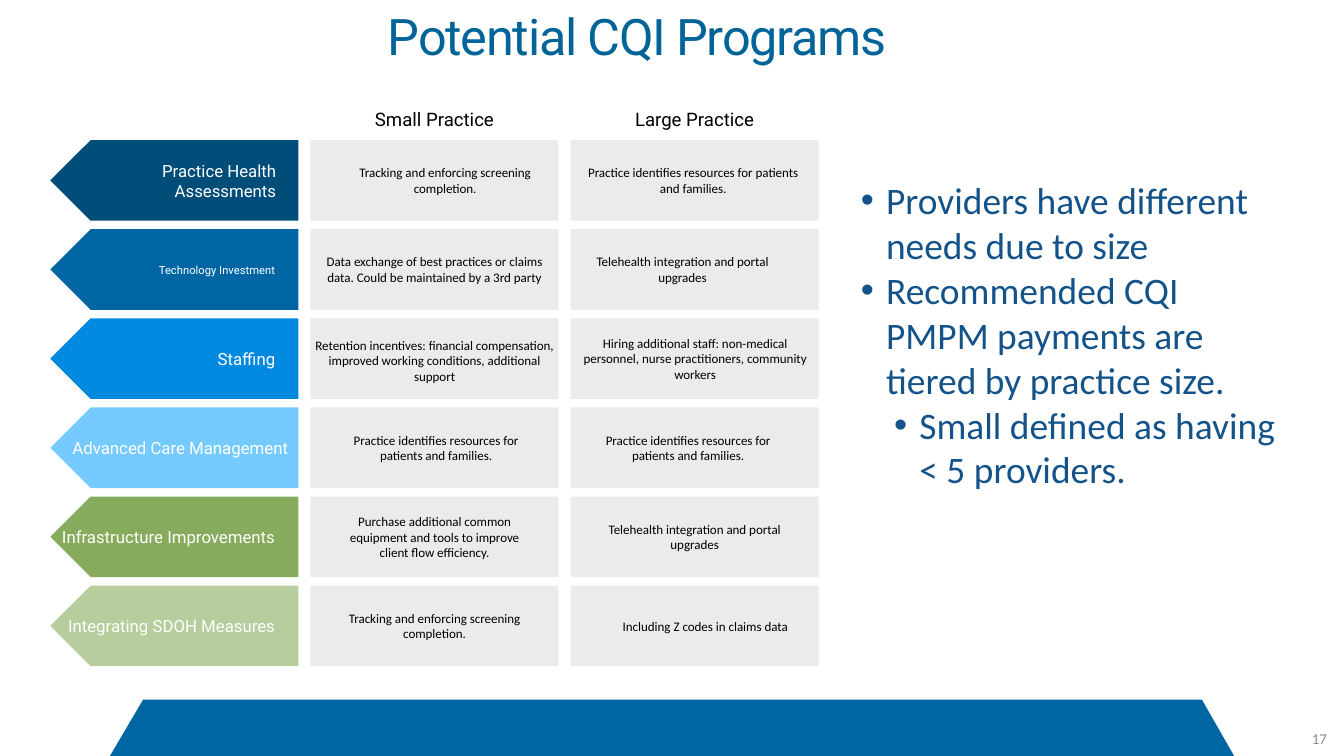
from typing import NamedTuple

from lxml import etree
from pptx import Presentation
from pptx import util as u
from pptx.dml.color import RGBColor
from pptx.enum import shapes, text
from pptx.oxml import ns

WHITE = RGBColor(0xFF, 0xFF, 0xFF)
BLACK = RGBColor(0, 0, 0)
TITLE_BLUE = RGBColor(0x00, 0x64, 0x98)
BODY_BLUE = RGBColor(0x13, 0x53, 0x8A)
NUMBER_GRAY = RGBColor(0x8C, 0x8C, 0x8C)
CELL_GRAY = RGBColor(0xEB, 0xEB, 0xEB)
NAVY = RGBColor(0x00, 0x4D, 0x7A)
BLUE = RGBColor(0x00, 0x66, 0xA3)
BRIGHT_BLUE = RGBColor(0x00, 0x89, 0xDE)
SKY = RGBColor(0x75, 0xCA, 0xFF)
GREEN = RGBColor(0x86, 0xAB, 0x5D)
PALE_GREEN = RGBColor(0xB6, 0xCD, 0x9E)

LEFT, CENTER, RIGHT = text.PP_ALIGN.LEFT, text.PP_ALIGN.CENTER, text.PP_ALIGN.RIGHT
MIDDLE, TOP = text.MSO_ANCHOR.MIDDLE, text.MSO_ANCHOR.TOP

ARROW_LEFT, SMALL_LEFT, LARGE_LEFT = 0.5, 3.08, 5.66
BLOCK_WIDTH, BLOCK_HEIGHT = 2.46, 0.8
FIRST_ROW_TOP, ROW_PITCH = 1.39, 0.884
HEADING_TOP, LABEL_HEIGHT, CELL_TEXT_HEIGHT = 0.98, 0.41, 0.6


class Style(NamedTuple):
    font: str
    size: float
    color: RGBColor
    align: text.PP_ALIGN
    anchor: text.MSO_ANCHOR = MIDDLE
    inset: float = 0.07


class Caption(NamedTuple):
    words: str
    left: float
    width: float
    shift: float = 0


class Program(NamedTuple):
    color: RGBColor
    label: Caption
    small: Caption
    large: Caption
    label_size: float = 12


class Bullet(NamedTuple):
    words: str
    level: int
    indent: float


TITLE = Style("Roboto", 36, TITLE_BLUE, CENTER, TOP, 0)
HEADING = Style("Roboto", 13.3, BLACK, CENTER)
LABEL = Style("Roboto", 12, WHITE, RIGHT)
CELL = Style("Calibri", 9.3, BLACK, CENTER)
BODY = Style("Calibri", 26.7, BODY_BLUE, LEFT, TOP, 0.1)
NUMBER = Style("Calibri", 10.7, NUMBER_GRAY, RIGHT, MIDDLE, 0.1)

RESOURCES = "Practice identifies resources for patients and families."
SCREENING = "Tracking and enforcing screening completion."
TELEHEALTH = "Telehealth integration and portal upgrades"

PROGRAMS = [
    Program(NAVY, Caption("Practice Health Assessments", 0.62, 2.19),
            Caption(SCREENING, 3.29, 2.25), Caption(RESOURCES, 5.75, 2.25)),
    Program(BLUE, Caption("Technology Investment", 0.77, 2.03),
            Caption("Data exchange of best practices or claims data. "
                    "Could be maintained by a 3rd party", 3.08, 2.46),
            Caption(TELEHEALTH, 5.75, 2.04), label_size=8),
    Program(BRIGHT_BLUE, Caption("Staffing", 1.52, 1.28),
            Caption("Retention incentives: financial compensation, improved "
                    "working conditions, additional support", 3.02, 2.58, 0.02),
            Caption("Hiring additional staff: non-medical personnel, nurse "
                    "practitioners, community workers", 5.66, 2.47)),
    Program(SKY, Caption("Advanced Care Management", 0.62, 2.31),
            Caption(RESOURCES, 3.25, 2.15), Caption(RESOURCES, 5.75, 2.15)),
    Program(GREEN, Caption("Infrastructure Improvements", 0.5, 2.3),
            Caption("Purchase additional common equipment and tools to improve "
                    "client flow efficiency.", 3.3, 2.02),
            Caption(TELEHEALTH, 5.77, 2.24)),
    Program(PALE_GREEN, Caption("Integrating SDOH Measures", 0.5, 2.3),
            Caption(SCREENING, 3.3, 2.02),
            Caption("Including Z codes in claims data", 5.98, 2.03)),
]

BULLETS = [
    Bullet("Providers have different needs due to size", 0, 0.25),
    Bullet("Recommended CQI PMPM payments are tiered by practice size.", 0, 0.25),
    Bullet("Small defined as having < 5 providers.", 1, 0.58),
]


def paint(shape, color: RGBColor) -> None:
    shape.fill.solid()
    shape.fill.fore_color.rgb = color
    shape.line.fill.background()
    shape.shadow.inherit = False


def add_text(page, words: str, left: float, top: float, width: float,
             height: float, style: Style):
    """Add a wrapped text box; each line of words becomes a paragraph."""
    box = page.shapes.add_textbox(*map(u.Inches, (left, top, width, height)))
    frame = box.text_frame
    frame.word_wrap = True
    frame.vertical_anchor = style.anchor
    frame.margin_left = frame.margin_right = u.Inches(style.inset)
    frame.margin_top = frame.margin_bottom = u.Inches(min(style.inset, 0.07))
    frame.text = words
    for para in frame.paragraphs:
        para.alignment = style.align
        for span in para.runs:
            span.font.name = style.font
            span.font.size = u.Pt(style.size)
            span.font.color.rgb = style.color
    return box


def add_block(page, kind: shapes.MSO_SHAPE, left: float, top: float, color: RGBColor):
    block = page.shapes.add_shape(
        kind, *map(u.Inches, (left, top, BLOCK_WIDTH, BLOCK_HEIGHT)))
    paint(block, color)
    return block


def add_caption(page, caption: Caption, row_top: float, height: float,
                style: Style) -> None:
    """Centre a caption vertically on its row."""
    top = row_top + (BLOCK_HEIGHT - height) / 2 + caption.shift
    add_text(page, caption.words, caption.left, top, caption.width, height, style)


def add_program(page, program: Program, top: float) -> None:
    arrow = add_block(page, shapes.MSO_SHAPE.PENTAGON, ARROW_LEFT, top, program.color)
    arrow.element.spPr.find(ns.qn("a:xfrm")).set("flipH", "1")
    add_caption(page, program.label, top, LABEL_HEIGHT,
                LABEL._replace(size=program.label_size))
    for left, caption in ((SMALL_LEFT, program.small), (LARGE_LEFT, program.large)):
        add_block(page, shapes.MSO_SHAPE.RECTANGLE, left, top, CELL_GRAY)
        add_caption(page, caption, top, CELL_TEXT_HEIGHT, CELL)


def add_bullets(page) -> None:
    words = "\n".join(bullet.words for bullet in BULLETS)
    box = add_text(page, words, 8.44, 1.69, 4.39, 3.41, BODY)
    for para, bullet in zip(box.text_frame.paragraphs, BULLETS):
        para.level = bullet.level
        properties = para._p.get_or_add_pPr()
        properties.set("marL", str(u.Inches(bullet.indent)))
        properties.set("indent", str(u.Inches(-0.25)))
        etree.SubElement(properties, ns.qn("a:buFont"), typeface="Arial")
        etree.SubElement(properties, ns.qn("a:buChar"), char="•")


def add_footer_band(page) -> None:
    corners = [(1.42, 6.94), (11.92, 6.94), (12.24, 7.5), (1.09, 7.5)]
    points = [(u.Inches(x), u.Inches(y)) for x, y in corners]
    builder = page.shapes.build_freeform(*points[0])
    builder.add_line_segments(points[1:], close=True)
    paint(builder.convert_to_shape(), BLUE)


def main() -> None:
    deck = Presentation()
    deck.slide_width, deck.slide_height = u.Inches(13.33), u.Inches(7.5)
    page = deck.slides.add_slide(deck.slide_layouts[6])

    add_footer_band(page)
    title = add_text(page, "Potential CQI Programs", 1.26, 0.05, 10.12, 0.61, TITLE)
    title.text_frame.paragraphs[0].runs[0].font._element.set("spc", "-90")
    add_text(page, "17", 11.76, 7.19, 1.5, 0.27, NUMBER)
    add_bullets(page)
    for words, left in (("Small Practice", SMALL_LEFT), ("Large Practice", LARGE_LEFT)):
        add_text(page, words, left, HEADING_TOP, BLOCK_WIDTH, LABEL_HEIGHT, HEADING)
    for row, program in enumerate(PROGRAMS):
        add_program(page, program, FIRST_ROW_TOP + row * ROW_PITCH)
    deck.save("out.pptx")


if __name__ == "__main__":
    main()
